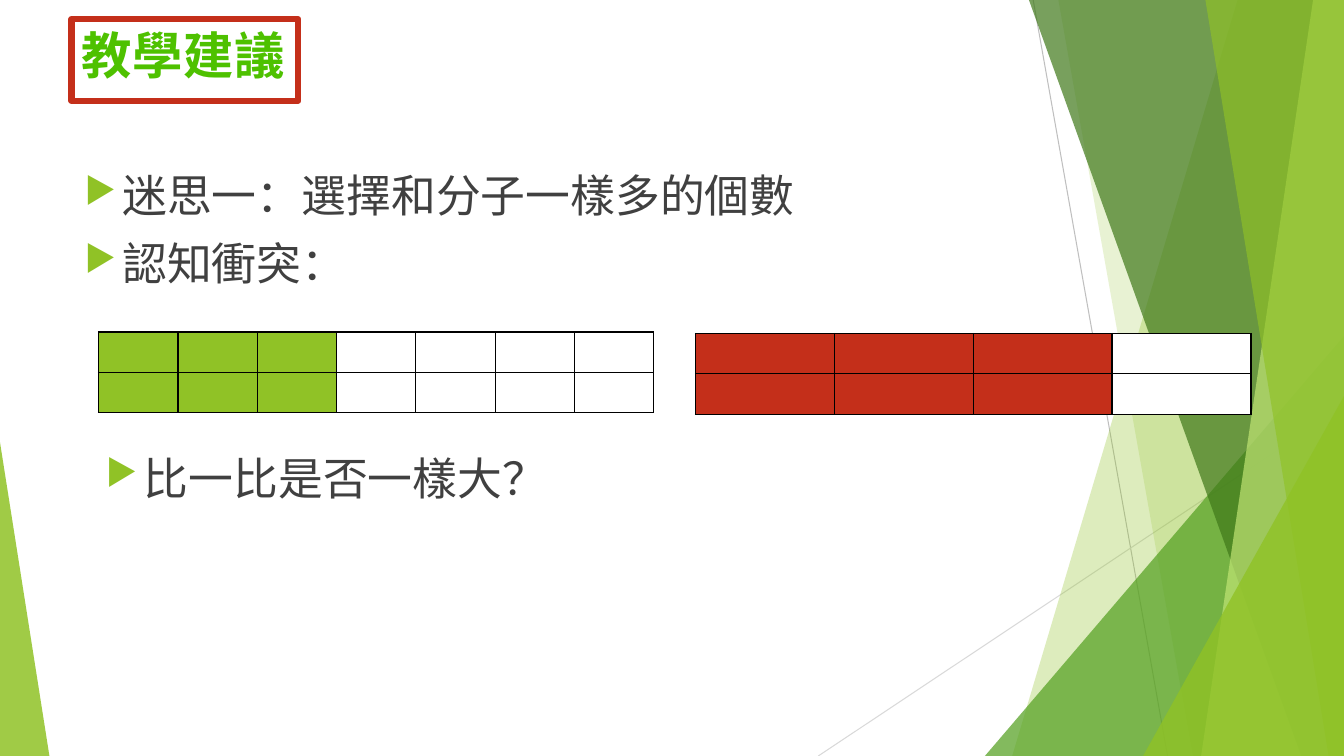
import dataclasses

import lxml.etree
import pptx
import pptx.dml.color
import pptx.enum.shapes
import pptx.enum.text
import pptx.oxml.ns
import pptx.util

Pt = pptx.util.Pt
qn = pptx.oxml.ns.qn
W, H = 960, 540


@dataclasses.dataclass(frozen=True)
class Theme:
    lime: str = "90C226"
    green: str = "54A021"
    forest: str = "3F7819"
    pale: str = "C0E474"
    red: str = "C42F1A"
    white: str = "FFFFFF"
    black: str = "000000"
    text: str = "404040"
    title_top: str = "4EC100"
    title_bottom: str = "378800"
    title_font: str = "Noto Sans Mono"
    body_font: str = "Karla"
    title_size: int = 36
    body_size: int = 32


def rgb(value):
    return pptx.dml.color.RGBColor.from_string(value)


def add_xml(parent, tag, **attrs):
    return lxml.etree.SubElement(parent, qn(tag), attrs)


class SlideBuilder:
    def __init__(self, slide, theme):
        self.slide = slide
        self.shapes = slide.shapes
        self.theme = theme

    def line(self, x1, y1, x2, y2, color):
        c = self.shapes.add_connector(
            pptx.enum.shapes.MSO_CONNECTOR.STRAIGHT, Pt(x1), Pt(y1), Pt(x2), Pt(y2))
        c.line.color.rgb = rgb(color)
        c.line.width = Pt(0.75)
        add_xml(c.element.spPr, "a:effectLst")

    def tint(self, sp, color, opacity):
        sp.shadow.inherit = False
        sp.line.fill.background()
        sp.fill.solid()
        sp.fill.fore_color.rgb = rgb(color)
        clr = sp.element.spPr.find(qn("a:solidFill"))[0]
        add_xml(clr, "a:alpha", val=str(opacity * 1000))

    def facet(self, top_x, bottom_x, color, opacity):
        fb = self.shapes.build_freeform(Pt(top_x), 0)
        fb.add_line_segments(
            [(Pt(W), 0), (Pt(W), Pt(H)), (Pt(bottom_x), Pt(H))], close=True)
        self.tint(fb.convert_to_shape(), color, opacity)

    def triangle(self, x, y, w, apex, color, opacity):
        sp = self.shapes.add_shape(
            pptx.enum.shapes.MSO_SHAPE.ISOSCELES_TRIANGLE, Pt(x), Pt(y), Pt(w), Pt(H - y))
        sp.adjustments[0] = apex
        self.tint(sp, color, opacity)

    def title(self, text, x, y, w, h):
        t = self.theme
        sp = self.shapes.title
        sp.left, sp.top, sp.width, sp.height = Pt(x), Pt(y), Pt(w), Pt(h)
        sp.fill.solid()
        sp.fill.fore_color.rgb = rgb(t.white)
        sp.line.color.rgb = rgb(t.red)
        sp.line.width = Pt(4.5)
        tf = sp.text_frame
        tf.text = text
        tf.auto_size = pptx.enum.text.MSO_AUTO_SIZE.NONE
        tf.vertical_anchor = pptx.enum.text.MSO_ANCHOR.TOP
        p = tf.paragraphs[0]
        p.alignment = pptx.enum.text.PP_ALIGN.LEFT
        font = p.runs[0].font
        font.name, font.size, font.bold = t.title_font, Pt(t.title_size), True
        font.fill.gradient()
        font.fill.gradient_angle = 270
        stops = ((0.25, t.title_top), (1, t.title_bottom))
        for stop, (position, color) in zip(font.fill.gradient_stops, stops):
            stop.position = position
            stop.color.rgb = rgb(color)
        p.runs[0]._r.get_or_add_rPr().set("spc", "50")

    def bullets(self, lines, x, y, w, h):
        t = self.theme
        tf = self.shapes.add_textbox(Pt(x), Pt(y), Pt(w), Pt(h)).text_frame
        tf.word_wrap = True
        for i, text in enumerate(lines):
            p = tf.add_paragraph() if i else tf.paragraphs[0]
            p.text = text
            p.space_before = Pt(10)
            pPr = p._p.get_or_add_pPr()
            pPr.set("marL", str(Pt(27)))
            pPr.set("indent", str(-Pt(27)))
            add_xml(add_xml(pPr, "a:buClr"), "a:srgbClr", val=t.lime)
            add_xml(pPr, "a:buSzPct", val="80000")
            add_xml(pPr, "a:buChar", char="▶")
            p.font.name, p.font.size = t.body_font, Pt(t.body_size)
            p.font.color.rgb = rgb(t.text)

    def fraction_bar(self, x, y, columns, shaded, color):
        t = self.theme
        table = self.shapes.add_table(
            2, columns, Pt(x), Pt(y), Pt(396.8), Pt(57.6)).table
        for column in table.columns:
            column.width = Pt(396.8 / columns)
        for row in table.rows:
            row.height = Pt(28.8)
            for i, cell in enumerate(row.cells):
                tcPr = cell._tc.get_or_add_tcPr()
                for side in ("L", "R", "T", "B"):
                    ln = add_xml(tcPr, f"a:ln{side}", w=str(Pt(1)))
                    add_xml(add_xml(ln, "a:solidFill"), "a:srgbClr", val=t.black)
                cell.fill.solid()
                cell.fill.fore_color.rgb = rgb(color if i < shaded else t.white)


def main():
    prs = pptx.Presentation()
    prs.slide_width, prs.slide_height = Pt(W), Pt(H)
    t = Theme()
    s = SlideBuilder(prs.slides.add_slide(prs.slide_layouts[5]), t)

    s.line(738, 0, 834, H, "BFBFBF")
    s.line(W, 290, 584.5, H, "D9D9D9")
    s.facet(884, 723, t.lime, 30)
    s.facet(756, 852, t.lime, 20)
    s.triangle(703.5, 240, 256.5, 1, t.green, 72)
    s.facet(735, 929.5, t.forest, 70)
    s.facet(938, 858, t.pale, 70)
    s.facet(861, 949, t.lime, 65)
    s.triangle(816.5, 283, 143.5, 1, t.lime, 80)
    s.triangle(0, 316, 35.3, 0, t.lime, 85)

    s.title("教學建議", 51, 13.7, 162, 58.3)
    s.bullets(["迷思一：選擇和分子一樣多的個數", "認知衝突："], 53.3, 116.6, 677, 358)
    s.fraction_bar(70.4, 237.2, 7, 3, t.lime)
    s.fraction_bar(496.8, 238.2, 4, 3, t.red)
    s.bullets(["比一比是否一樣大？"], 68.6, 318.2, 677, 197)

    prs.save("out.pptx")


if __name__ == "__main__":
    main()
